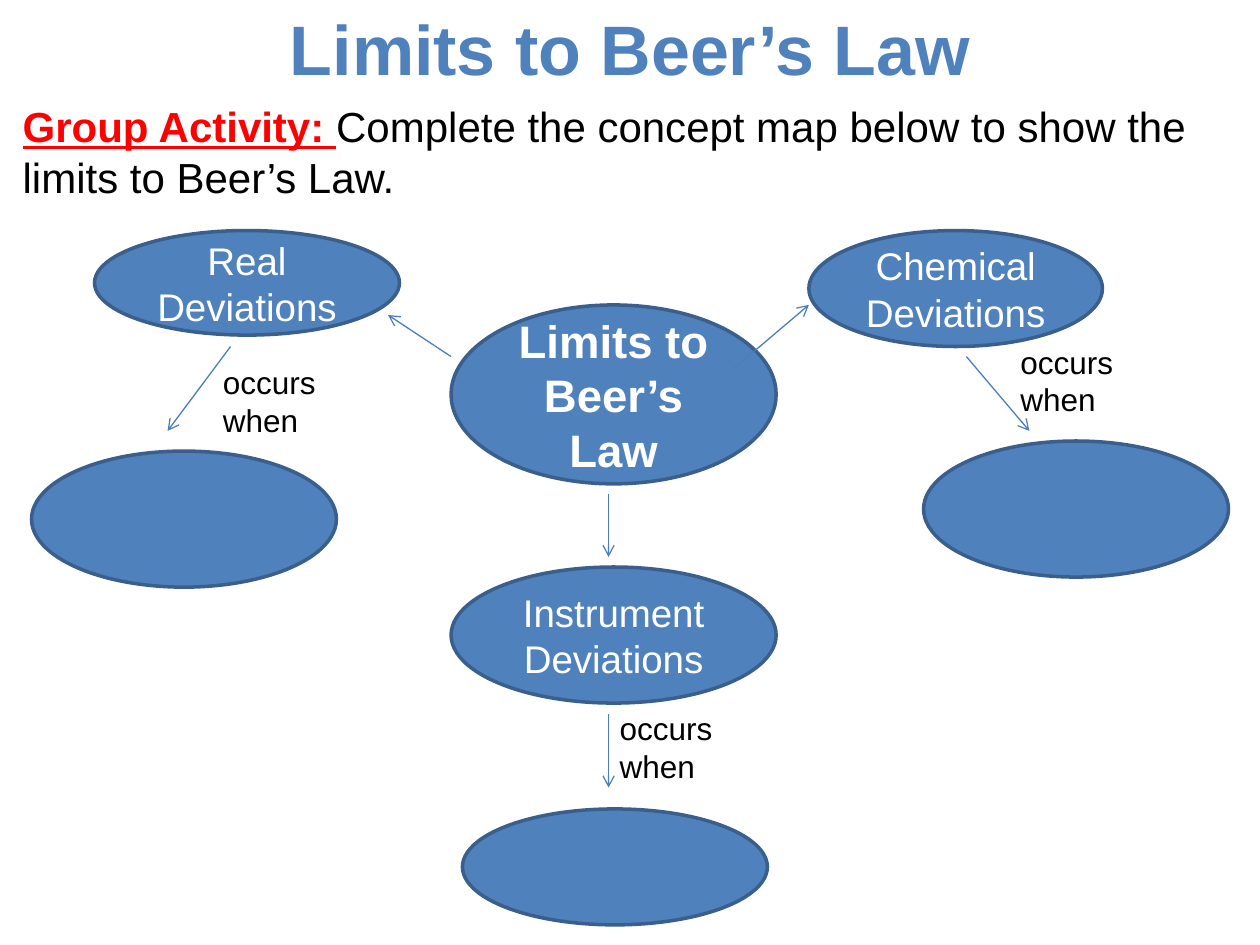
"""Build the concept-map slide on the limits to Beer’s Law."""
import pptx
import pptx.dml.color
import pptx.enum.shapes
import pptx.enum.text
import pptx.oxml
import pptx.oxml.ns
import pptx.util

Inches = pptx.util.Inches
COLORS = {
    "blue": "4F81BD",
    "outline": "3A5F8C",
    "arrow": "4B7EBC",
    "red": "FF0000",
    "black": "000000",
    "white": "FFFFFF",
}
NODES = [
    ("Limits to Beer’s Law", (3.58, 2.42, 2.58, 1.42), {"size": 26, "bold": True}),
    ("Real Deviations", (0.75, 1.83, 2.42, 0.83), {}),
    ("Chemical Deviations", (6.42, 1.83, 2.33, 0.92), {}),
    ("Instrument Deviations", (3.58, 4.5, 2.58, 1.08), {}),
    ("", (0.25, 3.58, 2.42, 1.08), {}),
    ("", (7.33, 3.5, 2.42, 1.08), {}),
    ("", (3.67, 6.42, 2.42, 0.92), {}),
]
ARROWS = [
    (3.58, 2.83, 3.08, 2.5),
    (5.83, 2.92, 6.42, 2.42),
    (4.83, 3.92, 4.83, 4.42),
    (1.83, 2.75, 1.33, 3.42),
    (7.67, 2.83, 8.17, 3.42),
    (4.83, 5.67, 4.83, 6.25),
]
LABELS = [(1.67, 2.83), (8, 2.67), (4.82, 5.58)]


def rgb(name):
    return pptx.dml.color.RGBColor.from_string(COLORS[name])


def add_text(paragraph, text, *, size, color="black", bold=False, underline=False):
    run = paragraph.add_run()
    run.text = text
    font = run.font
    font.name = "Arial"
    font.size = pptx.util.Pt(size)
    font.bold = bold
    font.underline = underline
    font.color.rgb = rgb(color)


def place(shape, left, top, width, height):
    shape.left, shape.top = Inches(left), Inches(top)
    shape.width, shape.height = Inches(width), Inches(height)


class ConceptMap:
    def __init__(self, slide, node_size=22, label_size=18):
        self.slide = slide
        self.node_size = node_size
        self.label_size = label_size

    def title(self, text, box):
        shape = self.slide.shapes.title
        place(shape, *box)
        shape.text_frame.vertical_anchor = pptx.enum.text.MSO_ANCHOR.MIDDLE
        add_text(shape.text_frame.paragraphs[0], text, size=40, color="blue", bold=True)

    def instruction(self, heading, text, box):
        shape = self.slide.placeholders[1]
        place(shape, *box)
        paragraph = shape.text_frame.paragraphs[0]
        properties = paragraph._p.get_or_add_pPr()
        properties.set("marL", "0")
        properties.set("indent", "0")
        properties.append(pptx.oxml.parse_xml(
            f'<a:buNone {pptx.oxml.ns.nsdecls("a")}/>'))
        add_text(paragraph, heading, size=24, color="red", bold=True, underline=True)
        add_text(paragraph, text, size=24)

    def node(self, text, box, size=None, bold=False):
        shape = self.slide.shapes.add_shape(
            pptx.enum.shapes.MSO_SHAPE.OVAL, *map(Inches, box))
        shape.shadow.inherit = False
        shape.fill.solid()
        shape.fill.fore_color.rgb = rgb("blue")
        shape.line.color.rgb = rgb("outline")
        shape.line.width = pptx.util.Pt(2)
        if text:
            frame = shape.text_frame
            frame.vertical_anchor = pptx.enum.text.MSO_ANCHOR.MIDDLE
            paragraph = frame.paragraphs[0]
            paragraph.alignment = pptx.enum.text.PP_ALIGN.CENTER
            add_text(paragraph, text, size=size or self.node_size, color="white", bold=bold)

    def arrow(self, *ends):
        connector = self.slide.shapes.add_connector(
            pptx.enum.shapes.MSO_CONNECTOR.STRAIGHT, *map(Inches, ends))
        connector.line.color.rgb = rgb("arrow")
        connector.line.width = pptx.util.Pt(0.75)
        namespace = pptx.oxml.ns.nsdecls("a")
        connector.line._get_or_add_ln().append(
            pptx.oxml.parse_xml(f'<a:tailEnd {namespace} type="arrow"/>'))
        connector._element.spPr.append(pptx.oxml.parse_xml(f"<a:effectLst {namespace}/>"))

    def label(self, lines, left, top):
        shape = self.slide.shapes.add_textbox(
            Inches(left), Inches(top), Inches(1.05), Inches(0.71))
        frame = shape.text_frame
        frame.word_wrap = True
        for index, line in enumerate(lines):
            paragraph = frame.add_paragraph() if index else frame.paragraphs[0]
            add_text(paragraph, line, size=self.label_size)


def main():
    presentation = pptx.Presentation()
    presentation.slide_width, presentation.slide_height = Inches(10), Inches(7.5)
    slide = presentation.slides.add_slide(presentation.slide_layouts[1])
    concept_map = ConceptMap(slide)
    concept_map.title("Limits to Beer’s Law", (0.25, 0, 9.5, 0.75))
    concept_map.instruction(
        "Group Activity: ",
        "Complete the concept map below to show the limits to Beer’s Law.",
        (0.08, 0.75, 9.75, 6.58))
    for text, box, style in NODES:
        concept_map.node(text, box, **style)
    for ends in ARROWS:
        concept_map.arrow(*ends)
    for left, top in LABELS:
        concept_map.label(("occurs", "when"), left, top)
    presentation.save("out.pptx")


if __name__ == "__main__":
    main()
